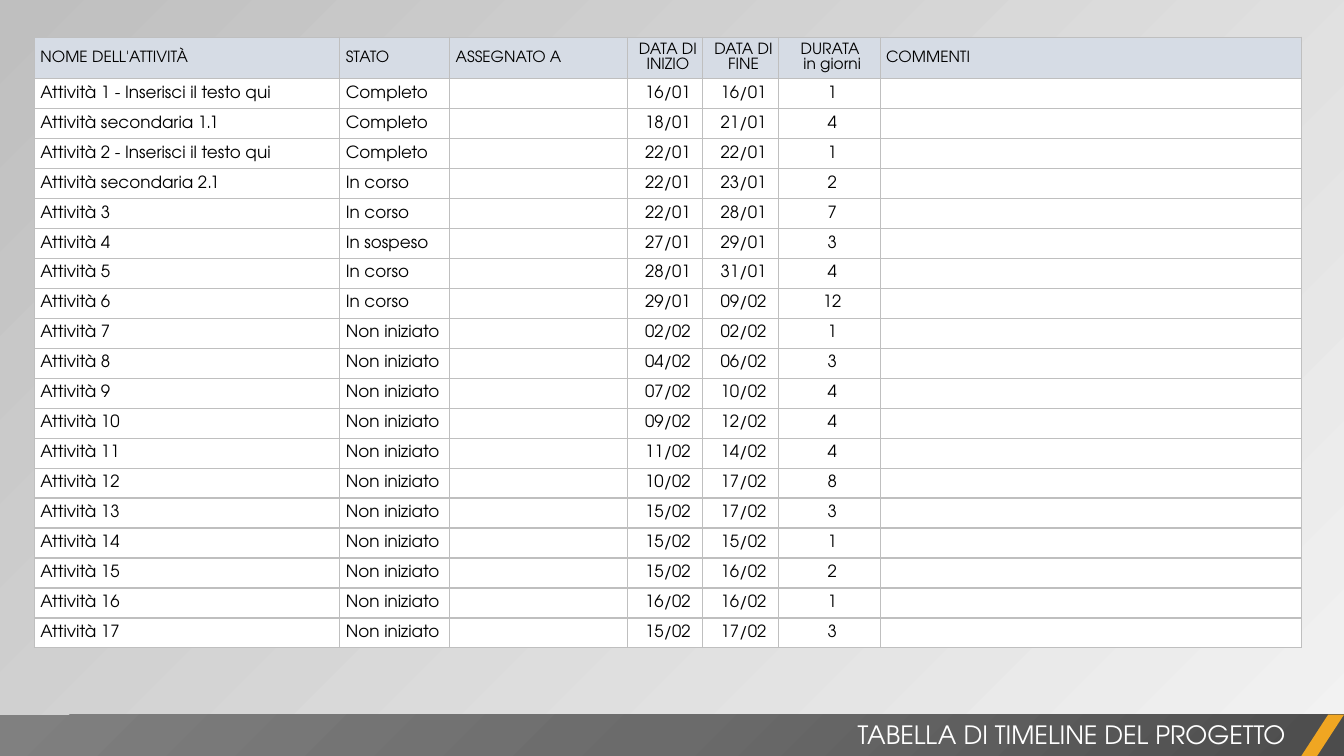
"""Build a project timeline table slide with a gradient footer title."""
from lxml import etree
from pptx import Presentation
from pptx.dml.color import RGBColor
from pptx.enum.shapes import MSO_SHAPE
from pptx.enum.text import MSO_ANCHOR, PP_ALIGN
from pptx.oxml import parse_xml
from pptx.oxml.ns import nsdecls, qn
from pptx.util import Inches, Pt

LEFT, CENTER, RIGHT = PP_ALIGN.LEFT, PP_ALIGN.CENTER, PP_ALIGN.RIGHT
MIDDLE = MSO_ANCHOR.MIDDLE
RECTANGLE, PARALLELOGRAM = MSO_SHAPE.RECTANGLE, MSO_SHAPE.PARALLELOGRAM

FONT = "TeX Gyre Adventor"
COLORS = {
    "text": "000000", "white": "FFFFFF", "header": "D6DCE5", "border": "BFBFBF",
    "back_light": "F2F2F2", "back_dark": "BFBFBF", "accent": "F0A622",
    "bar_dark": "4C4C4C", "bar_middle": "6B6B6B", "bar_light": "808080",
}
TITLE = "TABELLA DI TIMELINE DEL PROGETTO"
COLUMNS = [
    ("NOME DELL'ATTIVITÀ", 3.03, LEFT),
    ("STATO", 1.09, LEFT),
    ("ASSEGNATO A", 1.76, LEFT),
    ("DATA DI INIZIO", 0.75, CENTER),
    ("DATA DI FINE", 0.75, CENTER),
    ("DURATA \nin giorni", 1.01, CENTER),
    ("COMMENTI", 4.18, LEFT),
]
TASKS = [
    ("Attività 1 - Inserisci il testo qui", "Completo", "16/01", "16/01", 1),
    ("Attività secondaria 1.1", "Completo", "18/01", "21/01", 4),
    ("Attività 2 - Inserisci il testo qui", "Completo", "22/01", "22/01", 1),
    ("Attività secondaria 2.1", "In corso", "22/01", "23/01", 2),
    ("Attività 3", "In corso", "22/01", "28/01", 7),
    ("Attività 4", "In sospeso", "27/01", "29/01", 3),
    ("Attività 5", "In corso", "28/01", "31/01", 4),
    ("Attività 6", "In corso", "29/01", "09/02", 12),
    ("Attività 7", "Non iniziato", "02/02", "02/02", 1),
    ("Attività 8", "Non iniziato", "04/02", "06/02", 3),
    ("Attività 9", "Non iniziato", "07/02", "10/02", 4),
    ("Attività 10", "Non iniziato", "09/02", "12/02", 4),
    ("Attività 11", "Non iniziato", "11/02", "14/02", 4),
    ("Attività 12", "Non iniziato", "10/02", "17/02", 8),
    ("Attività 13", "Non iniziato", "15/02", "17/02", 3),
    ("Attività 14", "Non iniziato", "15/02", "15/02", 1),
    ("Attività 15", "Non iniziato", "15/02", "16/02", 2),
    ("Attività 16", "Non iniziato", "16/02", "16/02", 1),
    ("Attività 17", "Non iniziato", "15/02", "17/02", 3),
]
TABLE_LEFT, TABLE_TOP, TABLE_HEIGHT = 0.34, 0.37, 6.06
HEADER_HEIGHT = 0.41
ROW_HEIGHT = (TABLE_HEIGHT - HEADER_HEIGHT) / len(TASKS)
SLIDE_WIDTH, SLIDE_HEIGHT = 13.33, 7.5
BAR_TOP, BAR_HEIGHT, STRIPE_WIDTH = 7.09, 0.42, 0.43


def write_text(frame, text, size, color="text", align=LEFT):
    frame.text = text
    for para in frame.paragraphs:
        para.alignment = align
        for span in para.runs:
            span.font.name = FONT
            span.font.size = Pt(size)
            span.font.color.rgb = RGBColor.from_string(COLORS[color])
        if not text:
            etree.SubElement(para._p, qn("a:endParaRPr"), sz=str(size * 100))


def set_gradient(owner, stops, direction):
    marks = "".join(
        f'<a:gs pos="{position * 1000}"><a:srgbClr val="{COLORS[color]}">'
        f'<a:alpha val="{alpha * 1000}"/></a:srgbClr></a:gs>'
        for position, color, alpha in stops)
    gradient = parse_xml(
        f'<a:gradFill {nsdecls("a")} rotWithShape="1">'
        f"<a:gsLst>{marks}</a:gsLst>{direction}</a:gradFill>")
    solid = owner.find(".//" + qn("a:solidFill"))
    solid.getparent().replace(solid, gradient)


def add_plain_shape(page, kind, left, width, color):
    shape = page.shapes.add_shape(
        kind, Inches(left), Inches(BAR_TOP), Inches(width), Inches(BAR_HEIGHT))
    shape.shadow.inherit = False
    shape.fill.solid()
    shape.fill.fore_color.rgb = RGBColor.from_string(COLORS[color])
    shape.line.fill.background()
    return shape


def format_cell(cell, fill):
    cell.margin_left = Inches(0.06)
    cell.margin_right = cell.margin_top = cell.margin_bottom = 0
    cell.vertical_anchor = MIDDLE
    properties = cell._tc.get_or_add_tcPr()
    for side in ("a:lnL", "a:lnR", "a:lnT", "a:lnB"):
        line = etree.SubElement(properties, qn(side), w=str(Pt(1)))
        paint = etree.SubElement(line, qn("a:solidFill"))
        etree.SubElement(paint, qn("a:srgbClr"), val=COLORS["border"])
    cell.fill.solid()
    cell.fill.fore_color.rgb = RGBColor.from_string(COLORS[fill])


def add_timeline(page):
    rows = [[name for name, _, _ in COLUMNS]]
    rows += [[name, state, "", start, end, str(days), ""]
             for name, state, start, end, days in TASKS]
    width = sum(column[1] for column in COLUMNS)
    table = page.shapes.add_table(
        len(rows), len(COLUMNS), Inches(TABLE_LEFT), Inches(TABLE_TOP),
        Inches(width), Inches(TABLE_HEIGHT)).table
    table.first_row = table.horz_banding = False
    for column, (_, column_width, _) in zip(table.columns, COLUMNS):
        column.width = Inches(column_width)
    for row_index, values in enumerate(rows):
        header = row_index == 0
        table.rows[row_index].height = Inches(HEADER_HEIGHT if header else ROW_HEIGHT)
        for column_index, value in enumerate(values):
            cell = table.cell(row_index, column_index)
            format_cell(cell, "header" if header else "white")
            write_text(cell.text_frame, value, 11 if header else 12,
                       align=COLUMNS[column_index][2])


def add_footer(page):
    bar = add_plain_shape(page, RECTANGLE, 0, SLIDE_WIDTH, "bar_dark")
    set_gradient(
        bar._element.spPr,
        [(0, "bar_dark", 100), (50, "bar_middle", 100), (100, "bar_light", 100)],
        '<a:path path="circle"><a:fillToRect l="100000" t="100000"/></a:path>')
    stripe = add_plain_shape(
        page, PARALLELOGRAM, SLIDE_WIDTH - STRIPE_WIDTH, STRIPE_WIDTH, "accent")
    stripe.adjustments[0] = 0.65
    title = page.shapes.title
    title.left, title.top = Inches(5.25), Inches(7.09)
    title.width, title.height = Inches(7.6), Inches(0.4)
    title.text_frame.vertical_anchor = MIDDLE
    write_text(title.text_frame, TITLE, 18, color="white", align=RIGHT)
    page.shapes._spTree.append(title._element)


def main():
    deck = Presentation()
    deck.slide_width, deck.slide_height = Inches(SLIDE_WIDTH), Inches(SLIDE_HEIGHT)
    page = deck.slides.add_slide(deck.slide_layouts[5])
    page.background.fill.solid()
    set_gradient(page._element, [(0, "back_light", 40), (100, "back_dark", 100)],
                 '<a:lin ang="13500000" scaled="0"/>')
    add_timeline(page)
    add_footer(page)
    deck.save("out.pptx")


if __name__ == "__main__":
    main()
